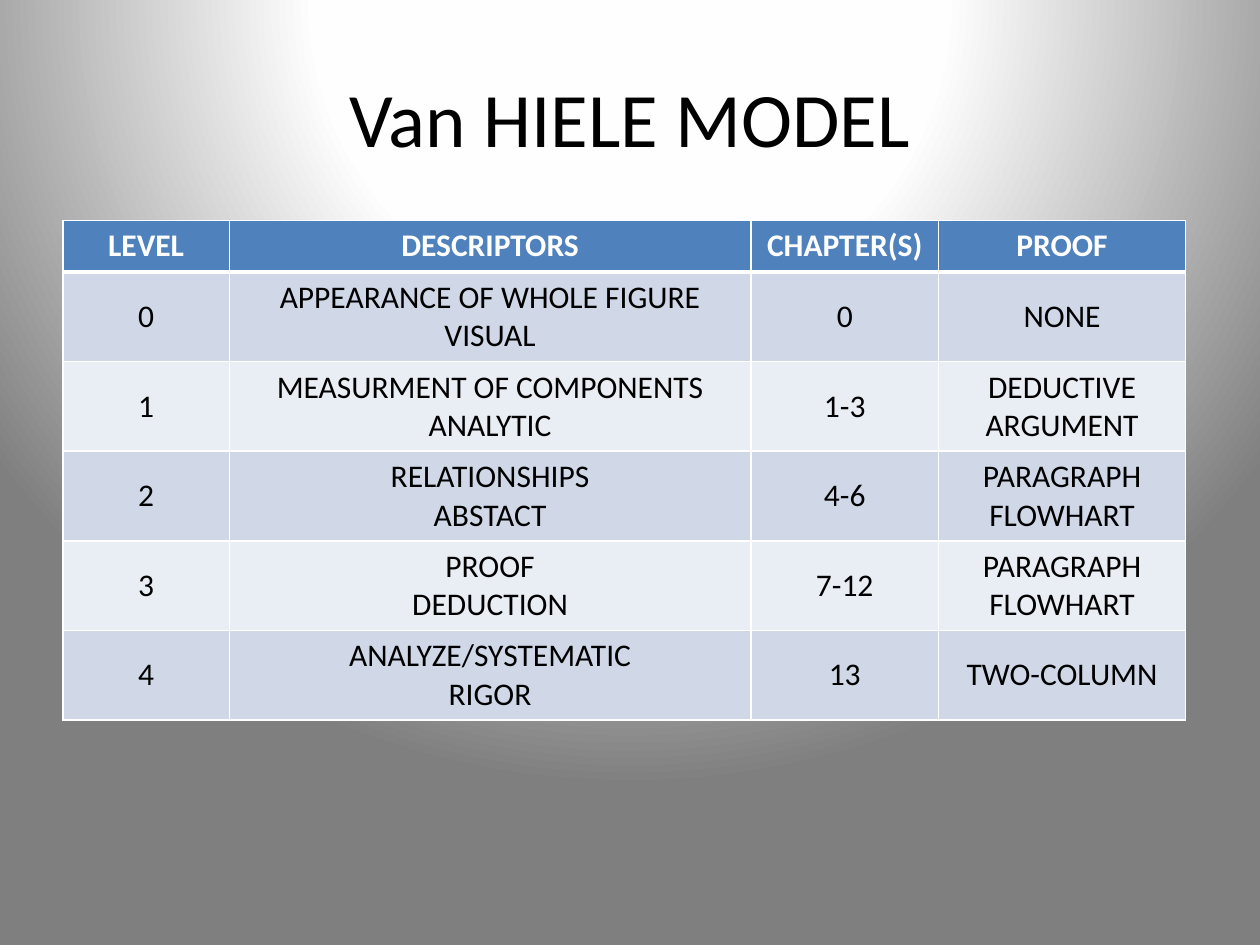
from pptx import Presentation
from pptx import util as u
from pptx.dml.color import RGBColor
from pptx.enum import text
from pptx.oxml import parse_xml
from pptx.oxml.ns import nsdecls

COLORS = {
    "white": "FFFFFF",
    "glow": "FEFEFE",
    "gray": "7F7F7F",
    "black": "000000",
    "header": "4F81BD",
    "odd": "D0D8E8",
    "even": "E9EDF4",
}
FONT = "Calibri"
MARGIN = 0.05
COLUMNS = [1.32, 4.14, 1.49, 1.96]
HEADER_HEIGHT, BODY_HEIGHT = 0.41, 0.7
LEVELS = [
    ["LEVEL", "DESCRIPTORS", "CHAPTER(S)", "PROOF"],
    ["0", "APPEARANCE OF WHOLE FIGURE\nVISUAL", "0", "NONE"],
    ["1", "MEASURMENT OF COMPONENTS\nANALYTIC", "1-3", "DEDUCTIVE\nARGUMENT"],
    ["2", "RELATIONSHIPS\nABSTACT", "4-6", "PARAGRAPH\nFLOWHART"],
    ["3", "PROOF\nDEDUCTION", "7-12", "PARAGRAPH\nFLOWHART"],
    ["4", "ANALYZE/SYSTEMATIC\nRIGOR", "13", "TWO-COLUMN"],
]


def paint_background(page):
    stops = [(0, "white"), (40, "glow"), (100, "gray")]
    marks = "".join(
        f'<a:gs pos="{share * 1000}"><a:srgbClr val="{COLORS[name]}"/></a:gs>'
        for share, name in stops
    )
    background = parse_xml(
        f'<p:bg {nsdecls("p", "a")}><p:bgPr><a:gradFill rotWithShape="1">'
        f'<a:gsLst>{marks}</a:gsLst><a:path path="circle">'
        '<a:fillToRect l="50000" t="-80000" r="50000" b="180000"/></a:path>'
        "</a:gradFill><a:effectLst/></p:bgPr></p:bg>"
    )
    page.element.cSld.insert(0, background)


def write_text(frame, content, color, **font):
    frame.text = content
    for para in frame.paragraphs:
        para.alignment = text.PP_ALIGN.CENTER
        for span in para.runs:
            for name, value in {"name": FONT, **font}.items():
                setattr(span.font, name, value)
            span.font.color.rgb = RGBColor.from_string(COLORS[color])


def add_title(deck, page):
    title = page.shapes.title
    place = {
        "left": int(deck.slide_width * MARGIN),
        "top": int(deck.slide_height * 0.04),
        "width": int(deck.slide_width * (1 - 2 * MARGIN)),
        "height": u.Inches(1.25),
    }
    for name, value in place.items():
        setattr(title, name, value)
    title.text_frame.vertical_anchor = text.MSO_ANCHOR.MIDDLE
    write_text(title.text_frame, "Van HIELE MODEL", "black", size=u.Pt(44))


def add_borders(cell, widths):
    properties = cell._tc.get_or_add_tcPr()
    for side, width in widths.items():
        properties.append(parse_xml(
            f'<a:ln{side} {nsdecls("a")} w="{u.Pt(width)}"><a:solidFill>'
            f'<a:srgbClr val="{COLORS["white"]}"/></a:solidFill></a:ln{side}>'
        ))


def fill_cell(cell, content, row):
    header = row == 0
    add_borders(cell, {"L": 1, "R": 1, "T": 3 if row == 1 else 1, "B": 3 if header else 1})
    shade = "header" if header else "odd" if row % 2 else "even"
    cell.fill.solid()
    cell.fill.fore_color.rgb = RGBColor.from_string(COLORS[shade])
    cell.vertical_anchor = text.MSO_ANCHOR.TOP if header else text.MSO_ANCHOR.MIDDLE
    write_text(cell.text_frame, content, "white" if header else "black",
               size=u.Pt(18), bold=header)


def add_level_table(deck, page):
    heights = [HEADER_HEIGHT] + [BODY_HEIGHT] * (len(LEVELS) - 1)
    table = page.shapes.add_table(
        len(LEVELS), len(COLUMNS), int(deck.slide_width * MARGIN), u.Inches(1.75),
        u.Inches(sum(COLUMNS)), u.Inches(sum(heights)),
    ).table
    for column, width in zip(table.columns, COLUMNS):
        column.width = u.Inches(width)
    for row, (line, height, contents) in enumerate(zip(table.rows, heights, LEVELS)):
        line.height = u.Inches(height)
        for cell, content in zip(line.cells, contents):
            fill_cell(cell, content, row)


def main():
    deck = Presentation()
    deck.slide_width, deck.slide_height = u.Inches(10), u.Inches(7.5)
    page = deck.slides.add_slide(deck.slide_layouts.get_by_name("Title Only"))
    paint_background(page)
    add_title(deck, page)
    add_level_table(deck, page)
    deck.save("out.pptx")


if __name__ == "__main__":
    main()
